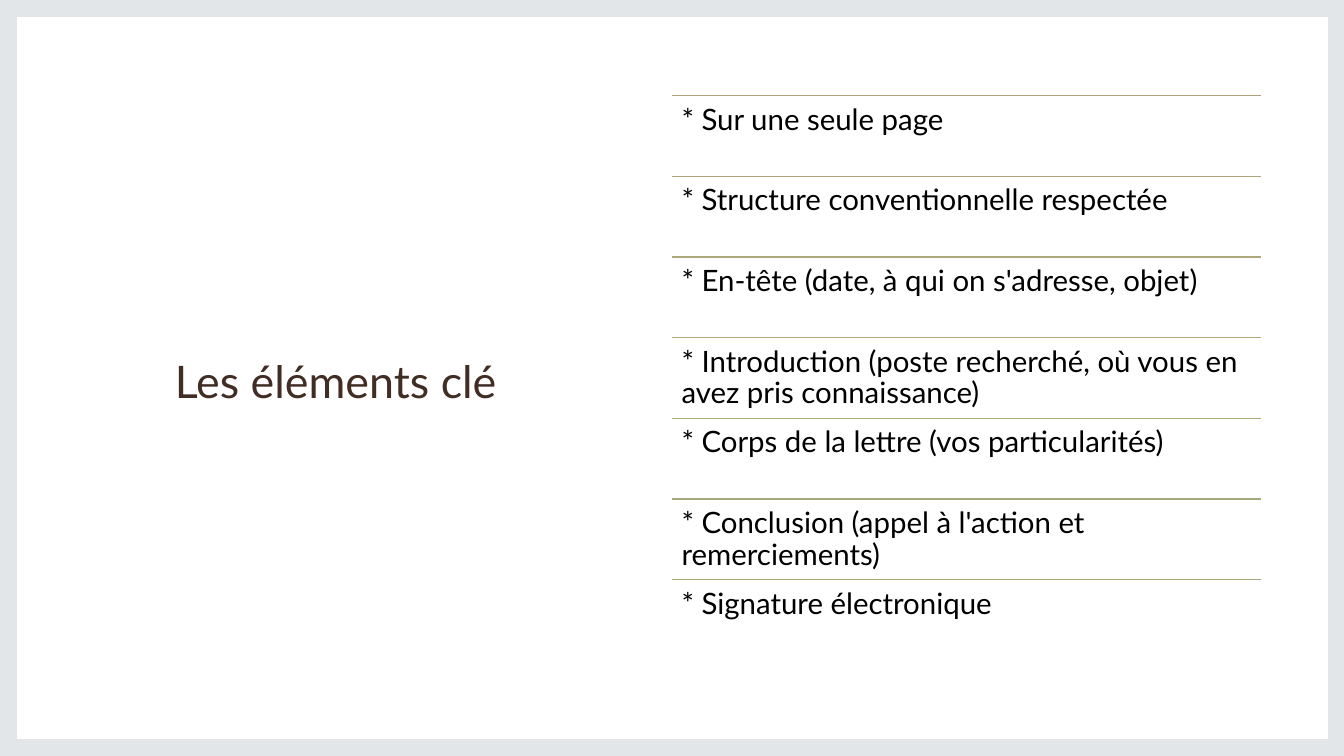
from dataclasses import dataclass

from lxml.etree import SubElement
from pptx import Presentation
from pptx.dml.color import RGBColor
from pptx.enum.shapes import MSO_CONNECTOR, MSO_SHAPE
from pptx.enum.text import MSO_ANCHOR, PP_ALIGN
from pptx.oxml.ns import qn
from pptx.util import Inches, Pt


@dataclass(frozen=True)
class Theme:
    font: str = "Lato"
    frame: str = "E2E6E8"
    panel: str = "FFFFFF"
    title: str = "412D24"
    body: str = "000000"
    title_size: int = 32
    body_size: int = 21
    rule_width: int = 1


THEME = Theme()
WIDTH, HEIGHT = 13.33, 7.5

# Each key element with the colour of the rule above it
ELEMENTS = [
    ("* Sur une seule page", "AFA078"),
    ("* Structure conventionnelle respectée", "AEA379"),
    ("* En-tête (date, à qui on s'adresse, objet)", "ACA67A"),
    ("* Introduction (poste recherché, où vous en avez pris connaissance)", "ABA87B"),
    ("* Corps de la lettre (vos particularités)", "A9AA7C"),
    ("* Conclusion (appel à l'action et remerciements)", "A5A87D"),
    ("* Signature électronique", "A1A77E"),
]
LIST_LEFT, LIST_TOP, LIST_WIDTH, ROW_HEIGHT = 6.67, 0.95, 5.84, 0.8


def add_panel(s, left, top, width, height, color):
    sp = s.shapes.add_shape(MSO_SHAPE.RECTANGLE, Inches(left), Inches(top),
                            Inches(width), Inches(height))
    sp.shadow.inherit = False
    sp.fill.solid()
    sp.fill.fore_color.rgb = RGBColor.from_string(color)
    sp.line.fill.background()


def add_text(s, box, text, size, color, spacing, inset=0.1,
             align=PP_ALIGN.LEFT, anchor=MSO_ANCHOR.TOP):
    tf = s.shapes.add_textbox(*map(Inches, box)).text_frame
    tf.word_wrap = True
    tf.vertical_anchor = anchor
    tf.margin_left = tf.margin_right = Inches(inset)
    tf.margin_top = tf.margin_bottom = Inches(inset)
    p = tf.paragraphs[0]
    p.alignment = align
    p.line_spacing = spacing
    r = p.add_run()
    r.text = text
    r.font.name = THEME.font
    r.font.size = Pt(size)
    r.font.color.rgb = RGBColor.from_string(color)


def add_rule(s, left, top, width, color):
    line = s.shapes.add_connector(MSO_CONNECTOR.STRAIGHT, Inches(left), Inches(top),
                                  Inches(left + width), Inches(top))
    line.line.color.rgb = RGBColor.from_string(color)
    line.line.width = Pt(THEME.rule_width)
    SubElement(line._element.spPr, qn("a:effectLst"))


def add_ruled_list(s):
    for i, (text, color) in enumerate(ELEMENTS):
        top = LIST_TOP + i * ROW_HEIGHT
        add_rule(s, LIST_LEFT, top, LIST_WIDTH, color)
        add_text(s, (LIST_LEFT, top, LIST_WIDTH, ROW_HEIGHT), text,
                 THEME.body_size, THEME.body, 0.9, inset=0.09)


def main():
    prs = Presentation()
    prs.slide_width, prs.slide_height = Inches(WIDTH), Inches(HEIGHT)
    s = prs.slides.add_slide(prs.slide_layouts[6])
    add_panel(s, 0, 0, WIDTH, HEIGHT, THEME.frame)
    add_panel(s, 0.17, 0.17, 13, 7.16, THEME.panel)
    add_text(s, (1.12, 1.12, 4.42, 5.25), "Les éléments clé",
             THEME.title_size, THEME.title, 1.1,
             align=PP_ALIGN.CENTER, anchor=MSO_ANCHOR.MIDDLE)
    add_ruled_list(s)
    prs.save("out.pptx")


if __name__ == "__main__":
    main()
